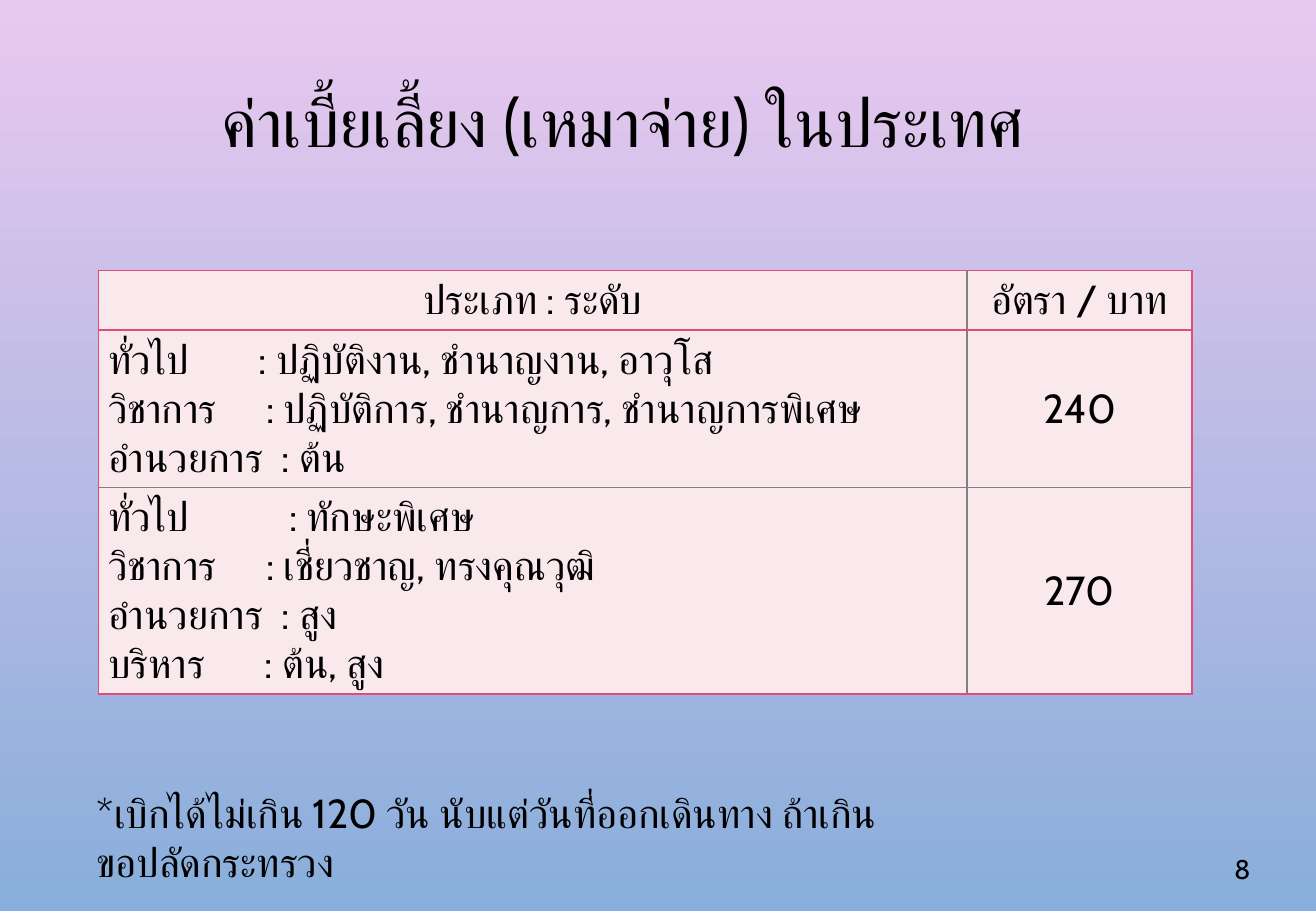
from lxml import etree
from pptx import Presentation
from pptx.dml.color import RGBColor
from pptx.enum.text import MSO_ANCHOR, PP_ALIGN
from pptx.oxml.ns import qn
from pptx.util import Inches, Pt

LEFT, CENTER, RIGHT = PP_ALIGN.LEFT, PP_ALIGN.CENTER, PP_ALIGN.RIGHT
TOP, MIDDLE = MSO_ANCHOR.TOP, MSO_ANCHOR.MIDDLE

FONT = "Cabin"
COLORS = {"sky_top": "E9C8EF", "sky_bottom": "89AEDB", "text": "000000",
          "cell": "FAE9EC", "border": "E34B7A", "divider": "808080"}

TITLE = "ค่าเบี้ยเลี้ยง (เหมาจ่าย) ในประเทศ"
HEADERS = ("ประเภท : ระดับ", "อัตรา / บาท")
RATES = [
    ([("ทั่วไป", 1.24, "ปฏิบัติงาน, ชำนาญงาน, อาวุโส"),
      ("วิชาการ", 1.3, "ปฏิบัติการ, ชำนาญการ, ชำนาญการพิเศษ"),
      ("อำนวยการ", 1.43, "ต้น")], "240"),
    ([("ทั่วไป", 1.49, "ทักษะพิเศษ"),
      ("วิชาการ", 1.3, "เชี่ยวชาญ, ทรงคุณวุฒิ"),
      ("อำนวยการ", 1.43, "สูง"),
      ("บริหาร", 1.29, "ต้น, สูง")], "270"),
]
NOTE = "*เบิกได้ไม่เกิน 120 วัน นับแต่วันที่ออกเดินทาง ถ้าเกินขอปลัดกระทรวง"
PAGE_NUMBER = "8"

WIDTH, HEIGHT = Inches(10.83), Inches(7.5)
PERCENT = {
    "title": (9.42, 4.67, 75.81, 18.13),
    "table": (7.48, 29.68, 83.1, 46.5),
    "note": (6.46, 85.87, 61.77, 6.67),
    "number": (91.41, 92.67, 4.52, 5.33),
}
COLUMN_SHARES = (79.44, 20.56)
ROW_SHARES = (14.1, 37.1, 48.8)


def area(name):
    left, top, width, height = PERCENT[name]
    return [int(share * length / 100) for share, length in
            ((left, WIDTH), (top, HEIGHT), (width, WIDTH), (height, HEIGHT))]


def style(para, size, align=LEFT):
    para.alignment = align
    para.font.size = Pt(size)
    para.font.name = FONT
    para.font.color.rgb = RGBColor.from_string(COLORS["text"])
    defaults = para._p.pPr.find(qn("a:defRPr"))
    etree.SubElement(defaults, qn("a:cs")).set("typeface", FONT)


def add_tab(para, inches):
    stops = etree.SubElement(para._p.get_or_add_pPr(), qn("a:tabLst"))
    etree.SubElement(stops, qn("a:tab"), pos=str(Inches(inches)), algn="l")


def add_border(cell, side, color):
    line = etree.SubElement(cell._tc.get_or_add_tcPr(), qn("a:" + side), w=str(Pt(1)))
    fill = etree.SubElement(line, qn("a:solidFill"))
    etree.SubElement(fill, qn("a:srgbClr"), val=COLORS[color])


def format_cell(cell, row, column):
    cell.margin_left = cell.margin_right = Inches(0.08)
    cell.margin_top = cell.margin_bottom = Inches(0.04)
    cell.vertical_anchor = MIDDLE if row and column else TOP
    add_border(cell, "lnL", "divider" if column else "border")
    add_border(cell, "lnR", "border" if column else "divider")
    add_border(cell, "lnT", "divider" if row == 2 else "border")
    add_border(cell, "lnB", "divider" if row == 1 else "border")
    cell.fill.solid()
    cell.fill.fore_color.rgb = RGBColor.from_string(COLORS["cell"])


def add_rates(page):
    left, top, width, height = area("table")
    table = page.shapes.add_table(len(RATES) + 1, 2, left, top, width, height).table
    for column, share in zip(table.columns, COLUMN_SHARES):
        column.width = int(width * share / 100)
    for row, share in zip(table.rows, ROW_SHARES):
        row.height = int(height * share / 100)
    for row, texts in enumerate([HEADERS] + RATES):
        for column, content in enumerate(texts):
            cell = table.cell(row, column)
            format_cell(cell, row, column)
            frame = cell.text_frame
            if isinstance(content, str):
                frame.text = content
                style(frame.paragraphs[0], 24, CENTER)
                continue
            frame.text = "\n".join(f"{kind}\t: {levels}" for kind, tab, levels in content)
            for para, (kind, tab, levels) in zip(frame.paragraphs, content):
                add_tab(para, tab)
                style(para, 24)


def add_text(page, name, text, size, align, anchor):
    frame = page.shapes.add_textbox(*area(name)).text_frame
    frame.word_wrap = True
    frame.vertical_anchor = anchor
    frame.text = text
    style(frame.paragraphs[0], size, align)


def main():
    deck = Presentation()
    deck.slide_width, deck.slide_height = WIDTH, HEIGHT
    page = deck.slides.add_slide(deck.slide_layouts[5])

    sky = page.background.fill
    sky.gradient()
    sky.gradient_angle = 270
    for stop, position, color in zip(sky.gradient_stops, (0, 1), ("sky_top", "sky_bottom")):
        stop.position = position
        stop.color.rgb = RGBColor.from_string(COLORS[color])

    title = page.shapes.title
    title.left, title.top, title.width, title.height = area("title")
    title.text_frame.text = TITLE
    title.text_frame.vertical_anchor = MIDDLE
    heading = title.text_frame.paragraphs[0]
    heading.line_spacing = 0.9
    style(heading, 40, CENTER)

    add_rates(page)
    add_text(page, "note", NOTE, 24, LEFT, TOP)
    add_text(page, "number", PAGE_NUMBER, 16, RIGHT, MIDDLE)
    deck.save("out.pptx")


if __name__ == "__main__":
    main()
